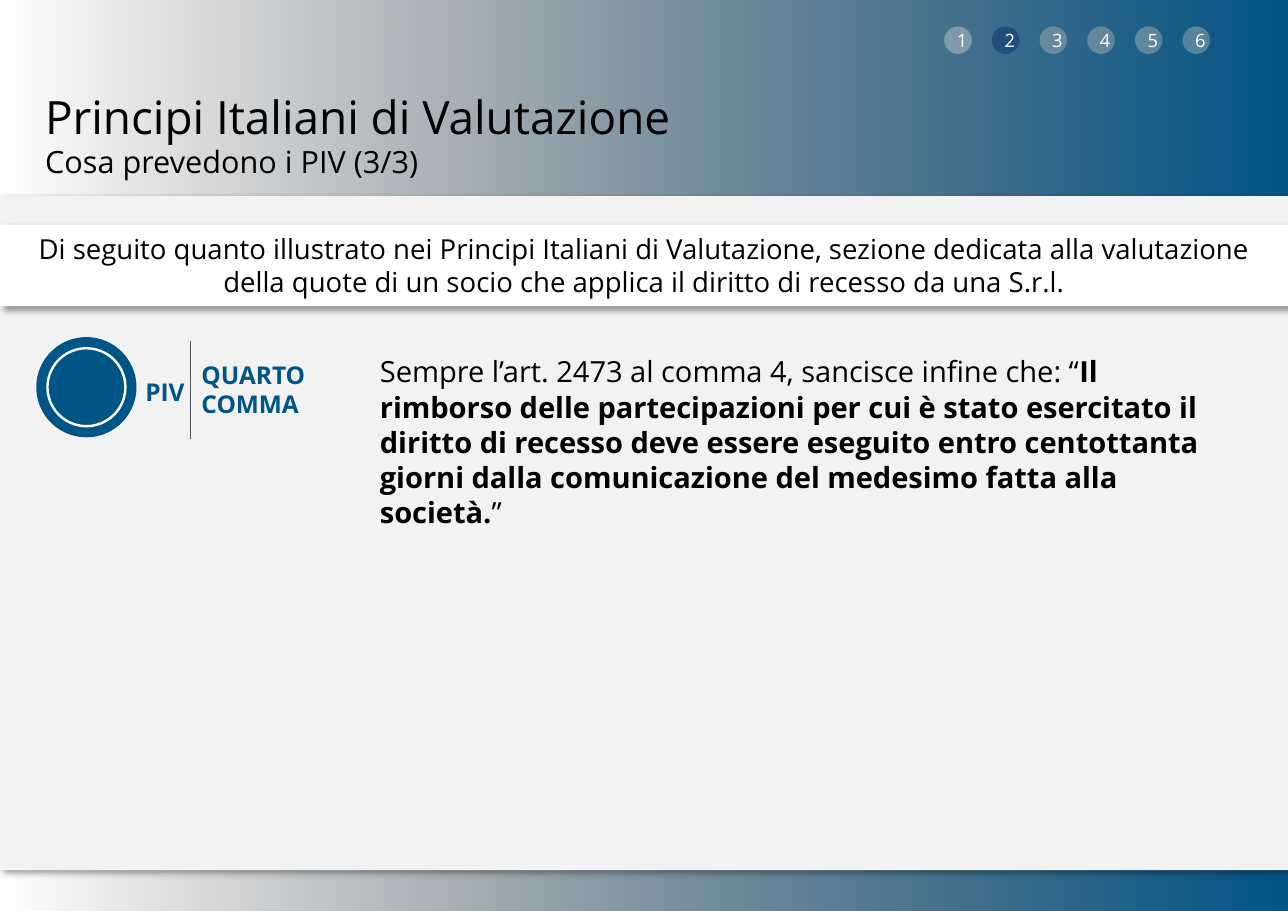
from lxml import etree
from pptx import Presentation
from pptx.dml.color import RGBColor
from pptx.enum.shapes import MSO_CONNECTOR, MSO_SHAPE
from pptx.enum.text import MSO_ANCHOR, PP_ALIGN
from pptx.oxml.ns import qn
from pptx.util import Inches, Pt

RECT, OVAL, RING = MSO_SHAPE.RECTANGLE, MSO_SHAPE.OVAL, MSO_SHAPE.DONUT
LEFT, CENTER = PP_ALIGN.LEFT, PP_ALIGN.CENTER
TOP, MIDDLE = MSO_ANCHOR.TOP, MSO_ANCHOR.MIDDLE
BLUE, BLACK, WHITE = "005587", "000000", "FFFFFF"

deck = Presentation()
deck.slide_width, deck.slide_height = Inches(11.69), Inches(8.27)
page = deck.slides.add_slide(deck.slide_layouts[6])
COLUMNS = 100
CELL = deck.slide_width / COLUMNS  # square grid cells
ROWS = deck.slide_height / CELL


def add_panel(kind, area, color, alpha=None, shadow=False):
    """Add a borderless shape; area is left, top, width, height in cells."""
    shape = page.shapes.add_shape(kind, *(round(n * CELL) for n in area))
    shape.fill.solid()
    shape.fill.fore_color.rgb = RGBColor.from_string(color)
    shape.line.fill.background()
    shape.shadow.inherit = False
    properties = shape.fill._xPr
    if alpha is not None:
        tint = properties.find(".//" + qn("a:srgbClr"))
        etree.SubElement(tint, qn("a:alpha"), val=str(alpha * 1000))
    if shadow:
        cast = etree.SubElement(
            properties.find(qn("a:effectLst")), qn("a:outerShdw"),
            blurRad=str(Pt(4)), dist=str(Pt(3)), dir="2700000",
            algn="tl", rotWithShape="0")
        shade = etree.SubElement(cast, qn("a:srgbClr"), val=BLACK)
        etree.SubElement(shade, qn("a:alpha"), val="40000")
    return shape


def write(shape, spans, size, color=BLACK, align=LEFT, anchor=TOP, insets=None):
    """Fill a shape with one paragraph of (text, bold) spans; insets in inches."""
    frame = shape.text_frame
    frame.word_wrap = True
    frame.vertical_anchor = anchor
    for side, inset in (insets or {}).items():
        setattr(frame, "margin_" + side, Inches(inset))
    para = frame.paragraphs[0]
    para.alignment = align
    for text, bold in spans:
        span = para.add_run()
        span.text = text
        for name, value in {"name": "Open Sans", "size": Pt(size), "bold": bold}.items():
            setattr(span.font, name, value)
        span.font.color.rgb = RGBColor.from_string(color)
    return para


# Background fading from white on the left to blue on the right
backdrop = add_panel(RECT, (0, 0, COLUMNS, ROWS), BLUE)
backdrop.rotation = 180
backdrop.fill.gradient()
backdrop.fill.gradient_angle = 0
for stop, color in zip(backdrop.fill.gradient_stops, (BLUE, BLACK)):
    stop.color.rgb = RGBColor.from_string(color)
clear_end = backdrop.fill._xPr.findall(".//" + qn("a:srgbClr"))[-1]
etree.SubElement(clear_end, qn("a:alpha"), val="0")

# Content area and introduction band
add_panel(RECT, (0, 15.23, COLUMNS, 52.35), "F2F2F2", shadow=True)
band = add_panel(RECT, (0, 17.45, COLUMNS, 6.33), WHITE, shadow=True)
write(band, [("Di seguito quanto illustrato nei Principi Italiani di Valutazione, "
              "sezione dedicata alla valutazione della quote di un socio che applica "
              "il diritto di recesso da una S.r.l.", False)],
      18, align=CENTER, anchor=MIDDLE)

# Section markers, the current one in dark blue
DOT, DOT_PITCH = 2.14, 3.7
for index, color in enumerate(["D9D9D9", "012169"] + ["BFBFBF"] * 4):
    dot = add_panel(OVAL, (73.31 + index * DOT_PITCH, 2.05, DOT, DOT), color, alpha=40)
    write(dot, [(str(index + 1), False)], 12, WHITE, CENTER, MIDDLE)

# Headings, article text and labels
FLUSH = {"left": 0, "top": 0.01, "right": 0, "bottom": 0}
ARTICLE = [
    ("Sempre l’art. 2473 al comma 4, sancisce infine che: “", False),
    ("Il rimborso delle partecipazioni per cui è stato esercitato il diritto di "
     "recesso deve essere eseguito entro centottanta giorni dalla comunicazione "
     "del medesimo fatta alla società.", True),
    ("”", False),
]
texts = [
    ((3.5, 6.76, 96.5, 4.45), [("Principi Italiani di Valutazione", False)], 30, BLACK, FLUSH),
    ((3.5, 11.04, 96.5, 3), [("Cosa prevedono i PIV (3/3)", False)], 20, BLACK, FLUSH),
    ((29.5, 27.29, 65.27, 11.12), ARTICLE, 19, BLACK, {**FLUSH, "top": 0.02}),
    ((14.8, 27.54, 17.96, 5.47), [("QUARTO COMMA", True)], 16, BLUE, {"right": 0.6}),
    ((10.44, 28.83, 7.44, 3.17), [("PIV", True)], 16, BLUE, {}),
]
for area, spans, size, color, insets in texts:
    box = page.shapes.add_textbox(*(round(n * CELL) for n in area))
    para = write(box, spans, size, color, insets=insets)
    if spans is ARTICLE:
        para.line_spacing = 1.01

# Divider and round badge
ends = (14.8, 26.52, 14.8, 34.13)
divider = page.shapes.add_connector(MSO_CONNECTOR.STRAIGHT, *(round(n * CELL) for n in ends))
divider.line.width = Pt(0.75)
divider.line.color.rgb = RGBColor.from_string("53565A")
etree.SubElement(divider.line._get_or_add_ln().getparent(), qn("a:effectLst"))

BADGE, RIM = 7.78, 0.77
add_panel(OVAL, (2.82, 26.18, BADGE, BADGE), BLUE)
ring_size = BADGE - 2 * RIM
ring = add_panel(RING, (2.82 + RIM, 26.18 + RIM, ring_size, ring_size), WHITE)
ring.adjustments[0] = 0.03

deck.save("out.pptx")
